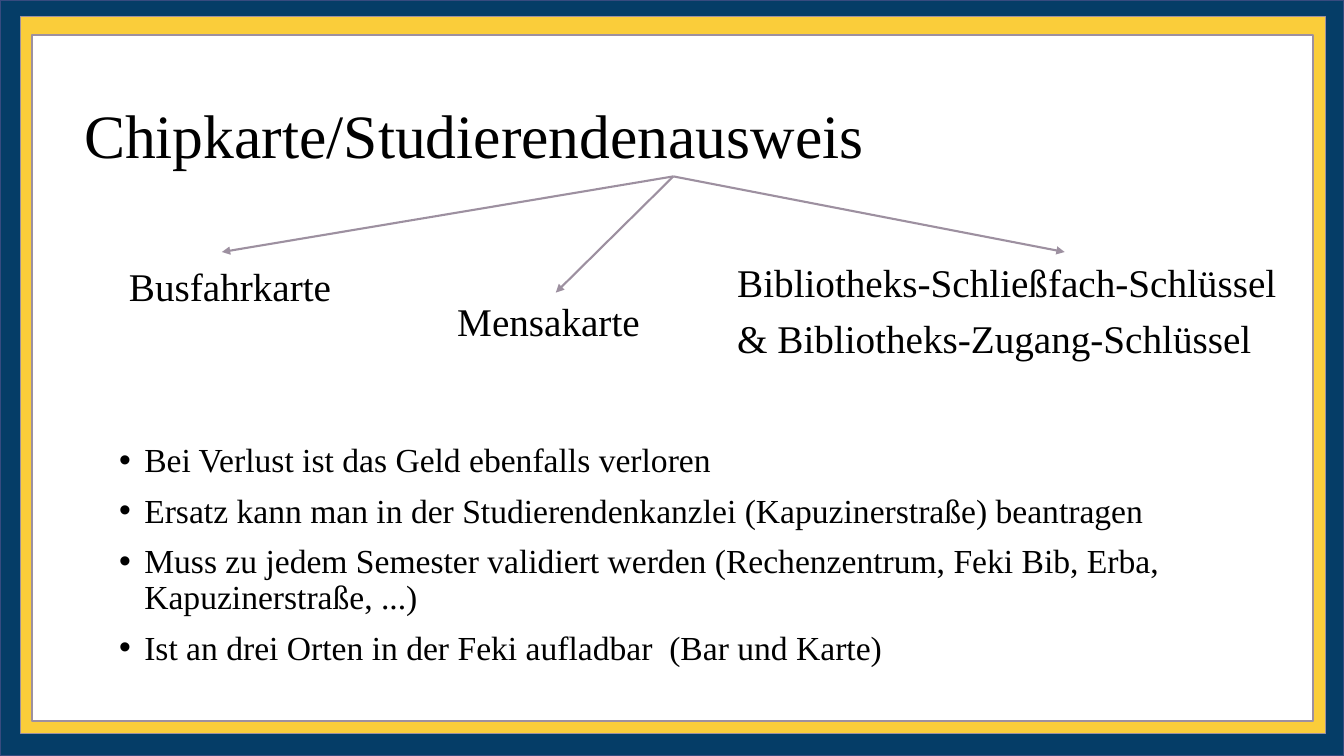
from lxml import etree
from pptx import Presentation
from pptx.dml.color import RGBColor
from pptx.enum import shapes, text
from pptx.oxml import ns
from pptx.util import Pt

NAVY = RGBColor(0x05, 0x3D, 0x67)
NAVY_EDGE = RGBColor(0x37, 0x4B, 0x7F)
GOLD = RGBColor(0xFA, 0xCD, 0x3A)
MAUVE = RGBColor(0x9D, 0x90, 0xA0)
WHITE = RGBColor(0xFF, 0xFF, 0xFF)
BLACK = RGBColor(0x00, 0x00, 0x00)


class CardSlide:
    """Holds the text style and the slide, and adds each kind of element."""

    font = "Times New Roman"

    def __init__(self, slide):
        self.slide = slide

    def panel(self, left, top, width, height, fill, edge):
        panel = self.slide.shapes.add_shape(
            shapes.MSO_SHAPE.RECTANGLE, Pt(left), Pt(top), Pt(width), Pt(height))
        panel.shadow.inherit = False
        panel.fill.solid()
        panel.fill.fore_color.rgb = fill
        panel.line.color.rgb = edge
        panel.line.width = Pt(1)

    def arrow(self, start, end):
        arrow = self.slide.shapes.add_connector(
            shapes.MSO_CONNECTOR.STRAIGHT, *map(Pt, start + end))
        arrow.line.color.rgb = MAUVE
        arrow.line.width = Pt(1.5)
        etree.SubElement(arrow.line._get_or_add_ln(), ns.qn("a:tailEnd"), type="triangle")
        etree.SubElement(arrow._element.spPr, ns.qn("a:effectLst"))

    def words(self, left, top, width, height, lines, size, spacing=0.9,
              bullets=False, anchor=text.MSO_ANCHOR.TOP):
        frame = self.slide.shapes.add_textbox(
            Pt(left), Pt(top), Pt(width), Pt(height)).text_frame
        frame.word_wrap = True
        frame.vertical_anchor = anchor
        for number, line in enumerate(lines):
            paragraph = frame.add_paragraph() if number else frame.paragraphs[0]
            if bullets:
                self.bullet(paragraph)
            paragraph.line_spacing = spacing
            paragraph.space_before = Pt(10 if number else 0)
            run = paragraph.add_run()
            run.text = line
            run.font.name = self.font
            run.font.size = Pt(size)
            run.font.color.rgb = BLACK

    def bullet(self, paragraph):
        properties = paragraph._p.get_or_add_pPr()
        properties.set("marL", str(Pt(18)))
        properties.set("indent", str(-Pt(18)))
        etree.SubElement(properties, ns.qn("a:buFont"), typeface="Arial")
        etree.SubElement(properties, ns.qn("a:buChar"), char="•")


def main():
    presentation = Presentation()
    presentation.slide_width, presentation.slide_height = Pt(960), Pt(540)
    card = CardSlide(presentation.slides.add_slide(presentation.slide_layouts[6]))

    card.panel(0, 0, 960, 540, NAVY, NAVY_EDGE)
    card.panel(14.5, 12, 932.5, 512, GOLD, MAUVE)
    card.panel(23, 25, 915, 490, WHITE, MAUVE)

    card.words(53, 54.5, 853, 89.5, ["Chipkarte/Studierendenausweis"], 44,
               anchor=text.MSO_ANCHOR.MIDDLE)

    for target in ((158.5, 180), (397, 209), (760.5, 180)):
        card.arrow((481, 126), target)

    card.words(85, 183.5, 167, 41, ["Busfahrkarte"], 28, spacing=1)
    card.words(319.5, 209, 167, 41, ["Mensakarte"], 28, spacing=1)
    card.words(519.5, 184.5, 425, 78.5, [
        "Bibliotheks-Schließfach-Schlüssel",
        "& Bibliotheks-Zugang-Schlüssel",
    ], 28)

    card.words(78, 313.5, 805.5, 168, [
        "Bei Verlust ist das Geld ebenfalls verloren",
        "Ersatz kann man in der Studierendenkanzlei (Kapuzinerstraße) beantragen",
        "Muss zu jedem Semester validiert werden (Rechenzentrum, Feki Bib, Erba, "
        "Kapuzinerstraße, ...)",
        "Ist an drei Orten in der Feki aufladbar  (Bar und Karte)",
    ], 24, bullets=True)

    presentation.save("out.pptx")


if __name__ == "__main__":
    main()
